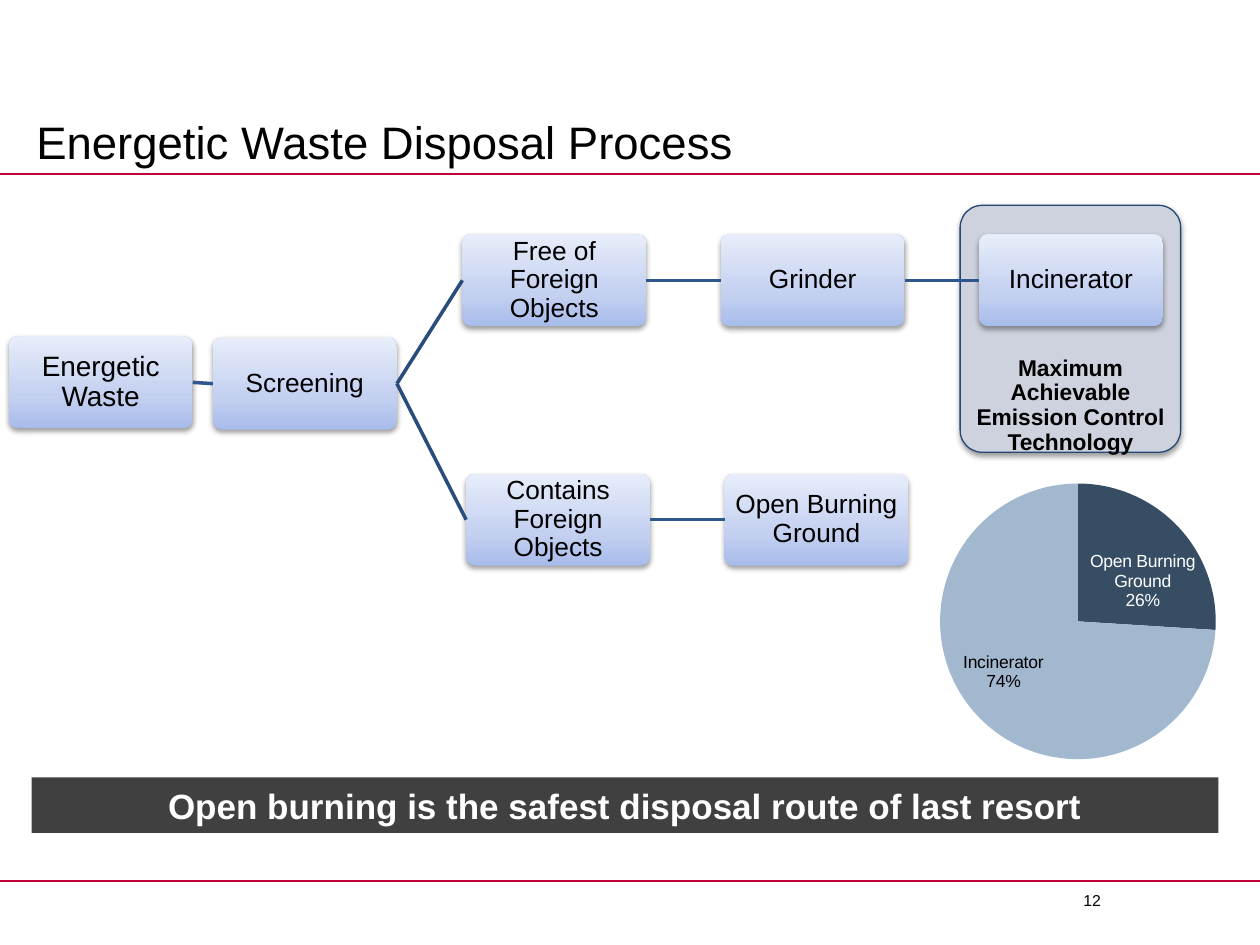
from lxml import etree
from pptx import Presentation
from pptx.chart.data import CategoryChartData
from pptx.dml.color import RGBColor
from pptx.enum.chart import XL_CHART_TYPE, XL_LABEL_POSITION
from pptx.enum.shapes import MSO_CONNECTOR, MSO_SHAPE
from pptx.enum.text import MSO_ANCHOR, PP_ALIGN
from pptx.oxml import parse_xml
from pptx.oxml.ns import nsdecls, qn
from pptx.util import Inches, Pt

ROUNDED, RECTANGLE = MSO_SHAPE.ROUNDED_RECTANGLE, MSO_SHAPE.RECTANGLE
STRAIGHT = MSO_CONNECTOR.STRAIGHT
CENTER, LEFT = PP_ALIGN.CENTER, PP_ALIGN.LEFT
TOP, MIDDLE, BOTTOM = MSO_ANCHOR.TOP, MSO_ANCHOR.MIDDLE, MSO_ANCHOR.BOTTOM

BLACK = RGBColor(0x00, 0x00, 0x00)
WHITE = RGBColor(0xFF, 0xFF, 0xFF)
CRIMSON = RGBColor(0xBF, 0x00, 0x39)
CHARCOAL = RGBColor(0x40, 0x40, 0x40)
PANEL_FILL = RGBColor(0xCE, 0xD2, 0xDE)
PANEL_EDGE = RGBColor(0x25, 0x48, 0x74)
LINK_BLUE = RGBColor(0x2D, 0x57, 0x8D)
BRANCH_BLUE = RGBColor(0x28, 0x4D, 0x7C)
PIE_DARK = RGBColor(0x36, 0x4D, 0x64)
PIE_LIGHT = RGBColor(0xA2, 0xB8, 0xCF)
NODE_STOPS = [
    (0, RGBColor(0xA8, 0xBC, 0xEB)),
    (35, RGBColor(0xC3, 0xD0, 0xF0)),
    (100, RGBColor(0xE7, 0xED, 0xFA)),
]

NODE_W, NODE_H = 1.46, 0.73
FLOW_X, FLOW_PITCH = 3.67, 2.05
UPPER_Y, MIDDLE_Y, LOWER_Y = 1.86, 2.68, 3.76
LOWER_SHIFT = 0.03


def write(shape, text, size, color=BLACK, bold=False, align=CENTER,
          anchor=MIDDLE, inset=(0.01, 0.01), spacing=0.9):
    """Set the shape's only paragraph; inset is (sides, top and bottom)."""
    frame = shape.text_frame
    side, end = (Inches(value) for value in inset)
    frame_format = {"word_wrap": True, "vertical_anchor": anchor,
                    "margin_left": side, "margin_right": side,
                    "margin_top": end, "margin_bottom": end}
    for name, value in frame_format.items():
        setattr(frame, name, value)
    paragraph = frame.paragraphs[0]
    paragraph.text = text
    paragraph.alignment, paragraph.line_spacing = align, spacing
    paragraph.font.color.rgb = color
    for name, value in {"name": "Arial", "size": Pt(size), "bold": bold}.items():
        setattr(paragraph.font, name, value)


def add_soft_shadow(shape):
    shape.shadow.inherit = False
    effects = shape._element.spPr.find(qn("a:effectLst"))
    effects.append(parse_xml(
        f'<a:outerShdw {nsdecls("a")} blurRad="{Pt(3.1)}" dist="{Pt(1.6)}" '
        'dir="5400000" rotWithShape="0"><a:srgbClr val="000000">'
        '<a:alpha val="38000"/></a:srgbClr></a:outerShdw>'))


prs = Presentation()
prs.slide_width, prs.slide_height = Inches(10), Inches(7.5)
slide = prs.slides.add_slide(prs.slide_layouts[6])
shapes = slide.shapes
connectors = []

# Header and footer
for rule_y in (1.38, 6.99):
    rule = shapes.add_connector(STRAIGHT, 0, Inches(rule_y), prs.slide_width, Inches(rule_y))
    rule.line.color.rgb, rule.line.width = CRIMSON, Pt(1)
    connectors.append(rule)

title = shapes.add_textbox(Inches(0.19), Inches(0.79), Inches(9.43), Inches(0.6))
write(title, "Energetic Waste Disposal Process", 26, align=LEFT, anchor=BOTTOM,
      inset=(0.1, 0.05), spacing=1)
page_number = shapes.add_textbox(Inches(8.5), Inches(7.02), Inches(1.5), Inches(0.4))
write(page_number, "12", 9, align=LEFT, anchor=TOP, inset=(0.1, 0.05), spacing=1)

# Emission control panel behind the incinerator
panel = shapes.add_shape(ROUNDED, Inches(7.62), Inches(1.63), Inches(1.75), Inches(1.96))
panel.adjustments[0] = 0.1
panel.fill.solid()
panel.fill.fore_color.rgb = PANEL_FILL
panel.line.color.rgb, panel.line.width = PANEL_EDGE, Pt(0.75)
add_soft_shadow(panel)
panel_caption = shapes.add_textbox(panel.left, Inches(2.83), panel.width, Inches(0.78))
write(panel_caption, "Maximum Achievable Emission Control Technology", 13,
      bold=True, inset=(0.11, 0))

# Process steps
steps = [
    ("Energetic Waste", 0.07, MIDDLE_Y - 0.01, 16),
    ("Screening", 1.69, MIDDLE_Y, 15),
    ("Free of Foreign Objects", FLOW_X, UPPER_Y, 15),
    ("Grinder", FLOW_X + FLOW_PITCH, UPPER_Y, 15),
    ("Incinerator", FLOW_X + 2 * FLOW_PITCH, UPPER_Y, 15),
    ("Contains Foreign Objects", FLOW_X + LOWER_SHIFT, LOWER_Y, 15),
    ("Open Burning Ground", FLOW_X + FLOW_PITCH + LOWER_SHIFT, LOWER_Y, 15),
]
gradient_stops = "".join(
    f'<a:gs pos="{share * 1000}"><a:srgbClr val="{color}"/></a:gs>'
    for share, color in NODE_STOPS)
nodes = {}
for label, x, y, size in steps:
    node = shapes.add_shape(ROUNDED, Inches(x), Inches(y), Inches(NODE_W), Inches(NODE_H))
    node.adjustments[0] = 0.1
    node.line.fill.background()
    node._element.spPr.find(qn("a:prstGeom")).addnext(parse_xml(
        f'<a:gradFill {nsdecls("a")} rotWithShape="1"><a:gsLst>{gradient_stops}'
        '</a:gsLst><a:lin ang="16200000" scaled="0"/></a:gradFill>'))
    add_soft_shadow(node)
    write(node, label, size)
    nodes[label] = node

links = [
    ("Energetic Waste", "Screening", LINK_BLUE),
    ("Screening", "Free of Foreign Objects", BRANCH_BLUE),
    ("Screening", "Contains Foreign Objects", BRANCH_BLUE),
    ("Free of Foreign Objects", "Grinder", LINK_BLUE),
    ("Grinder", "Incinerator", LINK_BLUE),
    ("Contains Foreign Objects", "Open Burning Ground", LINK_BLUE),
]
LEFT_SITE, RIGHT_SITE = 1, 3
for source, target, color in links:
    link = shapes.add_connector(STRAIGHT, 0, 0, 0, 0)
    link.begin_connect(nodes[source], RIGHT_SITE)
    link.end_connect(nodes[target], LEFT_SITE)
    link.line.color.rgb, link.line.width = color, Pt(2)
    connectors.append(link)
for connector in connectors:
    etree.SubElement(connector._element.spPr, qn("a:effectLst"))

# Key message
banner = shapes.add_shape(RECTANGLE, Inches(0.25), Inches(6.17), Inches(9.42), Inches(0.44))
banner.shadow.inherit = False
banner.fill.solid()
banner.fill.fore_color.rgb = CHARCOAL
banner.line.fill.background()
write(banner, "Open burning is the safest disposal route of last resort", 20,
      color=WHITE, bold=True, inset=(0.1, 0.05), spacing=1)

# Share of each disposal route
shares = CategoryChartData(number_format="#,##0")
shares.categories = ["Open Burning Ground", "Incinerator"]
shares.add_series("Series 1", (26, 74))
pie = shapes.add_chart(XL_CHART_TYPE.PIE, Inches(6.5), Inches(3.55),
                       Inches(3.86), Inches(2.85), shares).chart
pie.has_legend = pie.has_title = False
pie.font.name, pie.font.size, pie.font.color.rgb = "Arial", Pt(10), BLACK

plot_area = pie._chartSpace.chart.plotArea
for old_layout in plot_area.findall(qn("c:layout")):
    plot_area.remove(old_layout)
plot_area.insert(0, parse_xml(
    f'<c:layout {nsdecls("c")}><c:manualLayout><c:layoutTarget val="inner"/>'
    '<c:xMode val="edge"/><c:yMode val="edge"/><c:x val="0.249"/><c:y val="0.101"/>'
    '<c:w val="0.567"/><c:h val="0.768"/></c:manualLayout></c:layout>'))

series = pie.plots[0].series[0]
slices = [(PIE_DARK, WHITE, 0.03, 0.02), (PIE_LIGHT, BLACK, -0.05, 0.01)]
for index, (fill, ink, shift_x, shift_y) in enumerate(slices):
    point = series.points[index]
    point.format.fill.solid()
    point.format.fill.fore_color.rgb = fill
    point.format.line.fill.background()
    point.data_label.font.size = Pt(10)
    point.data_label.font.name = "Arial"
    point.data_label.font.color.rgb = ink
    point.data_label.position = XL_LABEL_POSITION.CENTER
    label_xml = series._element.findall(".//" + qn("c:dLbl"))[index]
    for part, shown in {"showVal": 0, "showCatName": 1, "showPercent": 1}.items():
        label_xml.find(qn("c:" + part)).set("val", str(shown))
    label_xml.find(qn("c:idx")).addnext(parse_xml(
        f'<c:layout {nsdecls("c")}><c:manualLayout><c:x val="{shift_x}"/>'
        f'<c:y val="{shift_y}"/></c:manualLayout></c:layout>'))
    etree.SubElement(label_xml, qn("c:separator")).text = "\n"

prs.save("out.pptx")
